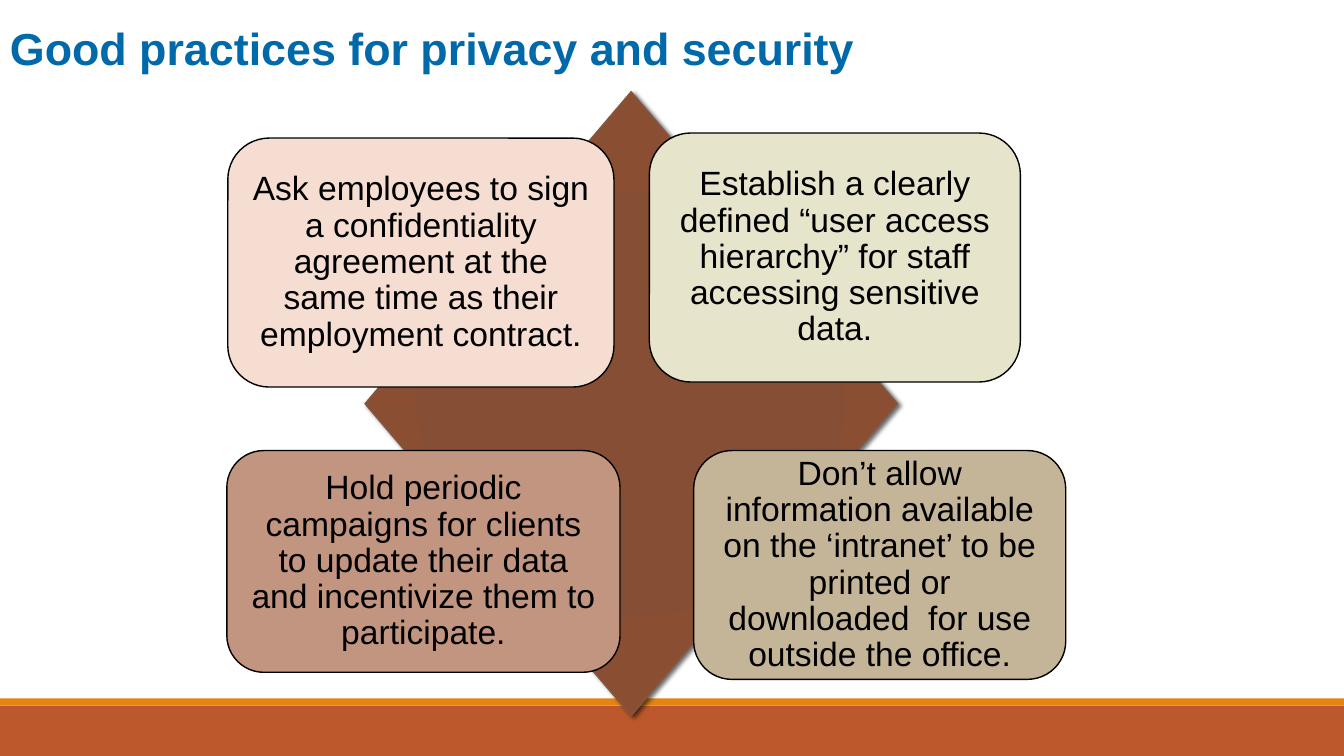
from pptx import Presentation, util as u
from pptx.dml.color import RGBColor
from pptx.enum import shapes, text
from pptx.oxml import parse_xml
from pptx.oxml.ns import nsdecls

FONT = "Arial"
INK = "000000"
PRACTICES = [
    ((2.26, 1.37, 3.83, 2.47), "F5DDD2",
     "Ask employees to sign a confidentiality agreement at the same time "
     "as their employment contract."),
    ((6.44, 1.32, 3.68, 2.47), "E7E4CC",
     "Establish a clearly defined “user access hierarchy” for staff "
     "accessing sensitive data."),
    ((2.25, 4.47, 3.9, 2.2), "C29580",
     "Hold periodic campaigns for clients to update their data and "
     "incentivize them to participate."),
    ((6.88, 4.47, 3.69, 2.27), "C5B598",
     "Don’t allow information available on the ‘intranet’ to be printed "
     "or downloaded  for use outside the office."),
]


def color(code):
    return RGBColor.from_string(code)


def style(font, size, code, bold=False):
    font.name = FONT
    font.size = u.Pt(size)
    font.bold = bold
    font.color.rgb = color(code)


def add_form(slide, kind, box, fill, line=None):
    form = slide.shapes.add_shape(kind, *map(u.Inches, box))
    form.shadow.inherit = False
    form.fill.solid()
    form.fill.fore_color.rgb = color(fill)
    if line:
        form.line.color.rgb = color(line)
        form.line.width = u.Pt(1)
    else:
        form.line.fill.background()
    return form


def add_title(slide, words):
    box = slide.shapes.add_textbox(*map(u.Inches, (0, 0.16, 9.86, 0.62)))
    box.text_frame.word_wrap = True
    para = box.text_frame.paragraphs[0]
    para.text = words
    style(para.font, 32, "0069AA", True)


def add_diamond(slide):
    form = add_form(slide, shapes.MSO_SHAPE.DIAMOND,
                    (3.62, 0.91, 5.28, 6.19), "874C32", "865640")
    props = form.element.spPr
    # Radial gradient
    stops = [(0, "874C32"), (34, "864E34"), (70, "8A4E33"), (100, "8A553D")]
    marks = "".join(f'<a:gs pos="{pos * 1000}"><a:srgbClr val="{code}"/></a:gs>'
                    for pos, code in stops)
    grad = parse_xml(
        f'<a:gradFill {nsdecls("a")} rotWithShape="1"><a:gsLst>{marks}</a:gsLst>'
        '<a:path path="circle"><a:fillToRect l="100000" t="100000" '
        'r="100000" b="100000"/></a:path></a:gradFill>')
    solid = props.find("{*}solidFill")
    props.replace(solid, grad)
    # Soft shadow
    props.find("{*}effectLst").append(parse_xml(
        f'<a:outerShdw {nsdecls("a")} blurRad="{u.Pt(3)}" dist="{u.Pt(2)}" '
        f'dir="{45 * 60000}" rotWithShape="0"><a:srgbClr val="{INK}">'
        '<a:alpha val="60000"/></a:srgbClr></a:outerShdw>'))


def add_card(slide, box, fill, words):
    card = add_form(slide, shapes.MSO_SHAPE.ROUNDED_RECTANGLE, box, fill, INK)
    frame = card.text_frame
    frame.word_wrap = True
    frame.vertical_anchor = text.MSO_ANCHOR.MIDDLE
    frame.margin_left = frame.margin_right = u.Inches(0.1)
    frame.margin_top = frame.margin_bottom = u.Inches(0.1)
    para = frame.paragraphs[0]
    para.text = words
    para.alignment = text.PP_ALIGN.CENTER
    para.line_spacing = 0.9
    style(para.font, 24, INK)


def main():
    deck = Presentation()
    deck.slide_width = u.Inches(13.33)
    deck.slide_height = u.Inches(7.5)
    slide = deck.slides.add_slide(deck.slide_layouts[6])

    # Footer bands
    rect = shapes.MSO_SHAPE.RECTANGLE
    add_form(slide, rect, (0, 7, 13.33, 0.5), "BD582C")
    add_form(slide, rect, (0, 6.93, 13.33, 0.07), "E48312")

    # Heading, backdrop and the four practices
    add_title(slide, "Good practices for privacy and security")
    add_diamond(slide)
    for box, fill, words in PRACTICES:
        add_card(slide, box, fill, words)

    deck.save("out.pptx")


if __name__ == "__main__":
    main()
